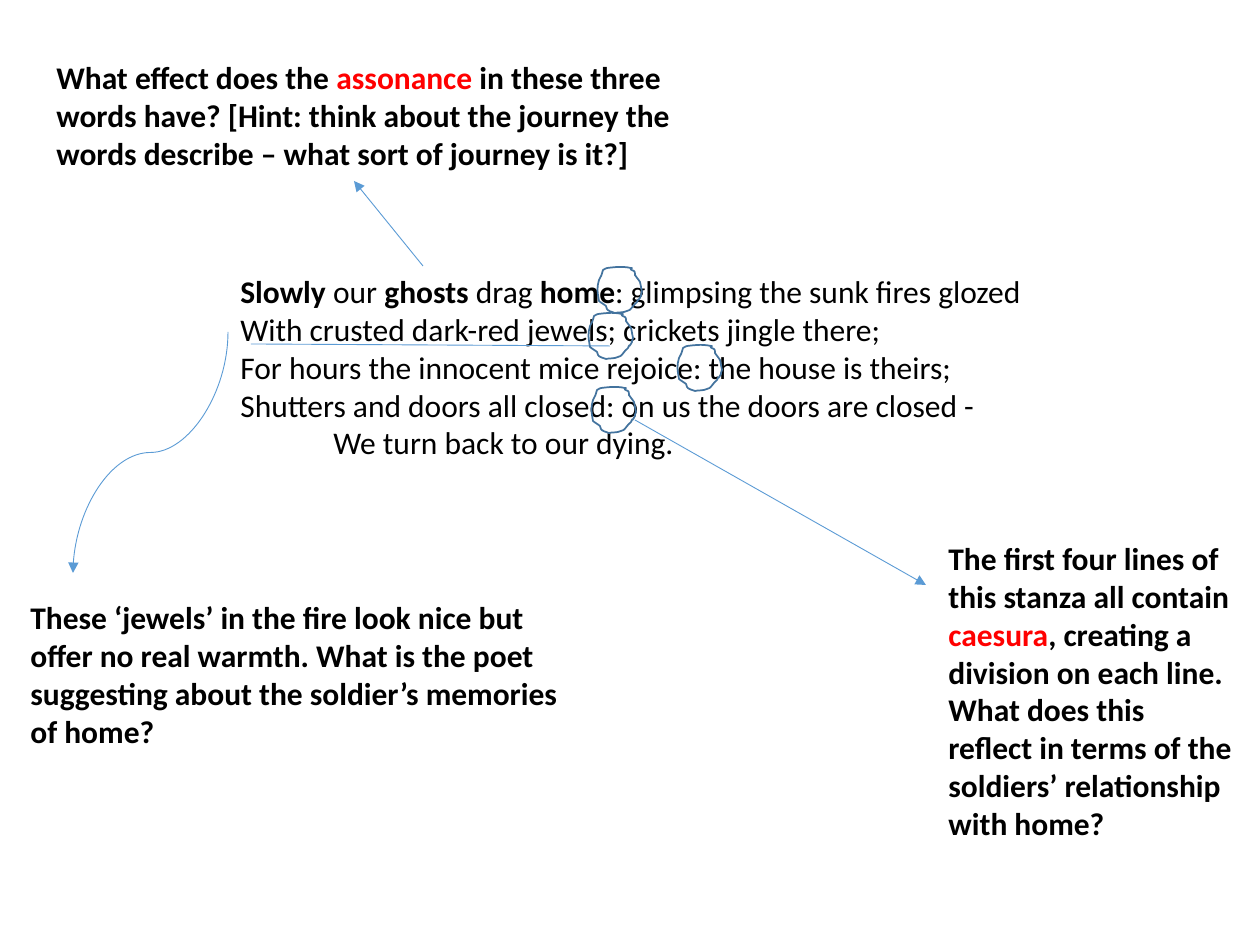
import pptx
import pptx.util
import pptx.dml.color
import pptx.enum.shapes
import pptx.enum.text
import pptx.oxml
import pptx.oxml.ns
import lxml.etree

PX = 914400 / 126
COLORS = {"text": "000000", "key": "FF0000", "arrow": "5B9BD5", "ring": "43739E"}


def px(n):
    return pptx.util.Emu(round(n * PX))


def add_run(p, text, size=18, bold=False, color="text"):
    r = p.add_run()
    r.text = text
    r.font.name = "Calibri"
    r.font.size = pptx.util.Pt(size)
    r.font.bold = bold
    r.font.color.rgb = pptx.dml.color.RGBColor.from_string(COLORS[color])


prs = pptx.Presentation()
prs.slide_width, prs.slide_height = px(1260), px(945)
s = prs.slides.add_slide(prs.slide_layouts[6])

notes = [
    ((228, 266, 905, 242), [
        [("Slowly", True, "text"), (" our ", False, "text"), ("ghosts", True, "text"),
         (" drag ", False, "text"), ("home", True, "text"),
         (": glimpsing the sunk fires glozed", False, "text")],
        [("With crusted dark-red jewels; crickets jingle there;", False, "text")],
        [("For hours the innocent mice rejoice: the house is theirs;", False, "text")],
        [("Shutters and doors all closed: on us the doors are closed -", False, "text")],
        [("We turn back to our dying.", False, "text")]]),
    ((44, 52, 655, 127), [[
        ("What effect does the ", True, "text"), ("assonance", True, "key"),
        (" in these three words have? [Hint: think about the journey the words "
         "describe – what sort of journey is it?]", True, "text")]]),
    ((18, 592, 571, 165), [[
        ("These ‘jewels’ in the fire look nice but offer no real warmth. What is the "
         "poet suggesting about the soldier’s memories of home?", True, "text")]]),
    ((936, 533, 309, 318), [[
        ("The first four lines of this stanza all contain ", True, "text"),
        ("caesura", True, "key"),
        (", creating a division on each line. What does this reflect in terms of the "
         "soldiers’ relationship with home?", True, "text")]]),
]
for box, lines in notes:
    tf = s.shapes.add_textbox(*map(px, box)).text_frame
    tf.word_wrap = True
    tf.auto_size = pptx.enum.text.MSO_AUTO_SIZE.SHAPE_TO_FIT_TEXT
    for i, line in enumerate(lines):
        p = tf.add_paragraph() if i else tf.paragraphs[0]
        for text, bold, color in line:
            add_run(p, text, bold=bold, color=color)
    if len(lines) > 1:
        p._p.get_or_add_pPr().set("marL", str(px(93)))

STRAIGHT = pptx.enum.shapes.MSO_CONNECTOR.STRAIGHT
CURVE = pptx.enum.shapes.MSO_CONNECTOR.CURVE
connectors = [
    (STRAIGHT, (423, 266, 354, 181), True, 0),
    (CURVE, (30, 375, 271, 530), True, 90),
    (STRAIGHT, (251, 344, 610, 346), False, 0),
    (STRAIGHT, (635, 420, 926, 585), True, 0),
]
for kind, ends, arrow, turn in connectors:
    c = s.shapes.add_connector(kind, *map(px, ends))
    c.line.color.rgb = pptx.dml.color.RGBColor.from_string(COLORS["arrow"])
    c.line.width = pptx.util.Pt(0.5)
    sp_pr = c._element.spPr
    if turn:
        sp_pr.find(pptx.oxml.ns.qn("a:xfrm")).set("rot", str(turn * 60000))
    if arrow:
        ln = sp_pr.find(pptx.oxml.ns.qn("a:ln"))
        lxml.etree.SubElement(ln, pptx.oxml.ns.qn("a:tailEnd")).set("type", "triangle")
    lxml.etree.SubElement(sp_pr, pptx.oxml.ns.qn("a:effectLst"))

ring_start = (34, 1)
ring_curves = [
    ((29, 0), (25, -1), (10, 1)),
    ((9, 1), (8, 2), (6, 3)),
    ((4, 10), (5, 7), (2, 13)),
    ((0, 20), (0, 23), (2, 34)),
    ((3, 35), (8, 38), (9, 39)),
    ((9, 40), (9, 41), (10, 42)),
    ((11, 44), (15, 45), (18, 46)),
    ((21, 45), (26, 46), (30, 44)),
    ((35, 43), (34, 40), (37, 38)),
    ((38, 37), (39, 36), (40, 35)),
    ((43, 28), (39, 38), (44, 29)),
    ((44, 28), (44, 27), (45, 25)),
    ((42, 11), (45, 18), (38, 8)),
    ((38, 6), (38, 4), (37, 4)),
    ((29, 1), (38, 1), (34, 1)),
]
for left, top in [(588, 313), (677, 345), (591, 387), (597, 267)]:
    fb = s.shapes.build_freeform(px(left + ring_start[0]), px(top + ring_start[1]))
    fb.add_line_segments(
        [(px(left + x), px(top + y)) for *_, (x, y) in ring_curves], close=True)
    sp = fb.convert_to_shape()
    sp.shadow.inherit = False
    sp.fill.background()
    sp.line.color.rgb = pptx.dml.color.RGBColor.from_string(COLORS["ring"])
    sp.line.width = pptx.util.Pt(1)
    segments = list(sp._element.spPr.iter(pptx.oxml.ns.qn("a:lnTo")))
    for segment, curve in zip(segments, ring_curves):
        bezier = lxml.etree.Element(pptx.oxml.ns.qn("a:cubicBezTo"))
        for x, y in curve:
            pt = lxml.etree.SubElement(bezier, pptx.oxml.ns.qn("a:pt"))
            pt.set("x", str(px(left + x) - sp.left))
            pt.set("y", str(px(top + y) - sp.top))
        segment.getparent().replace(segment, bezier)

prs.save("out.pptx")
